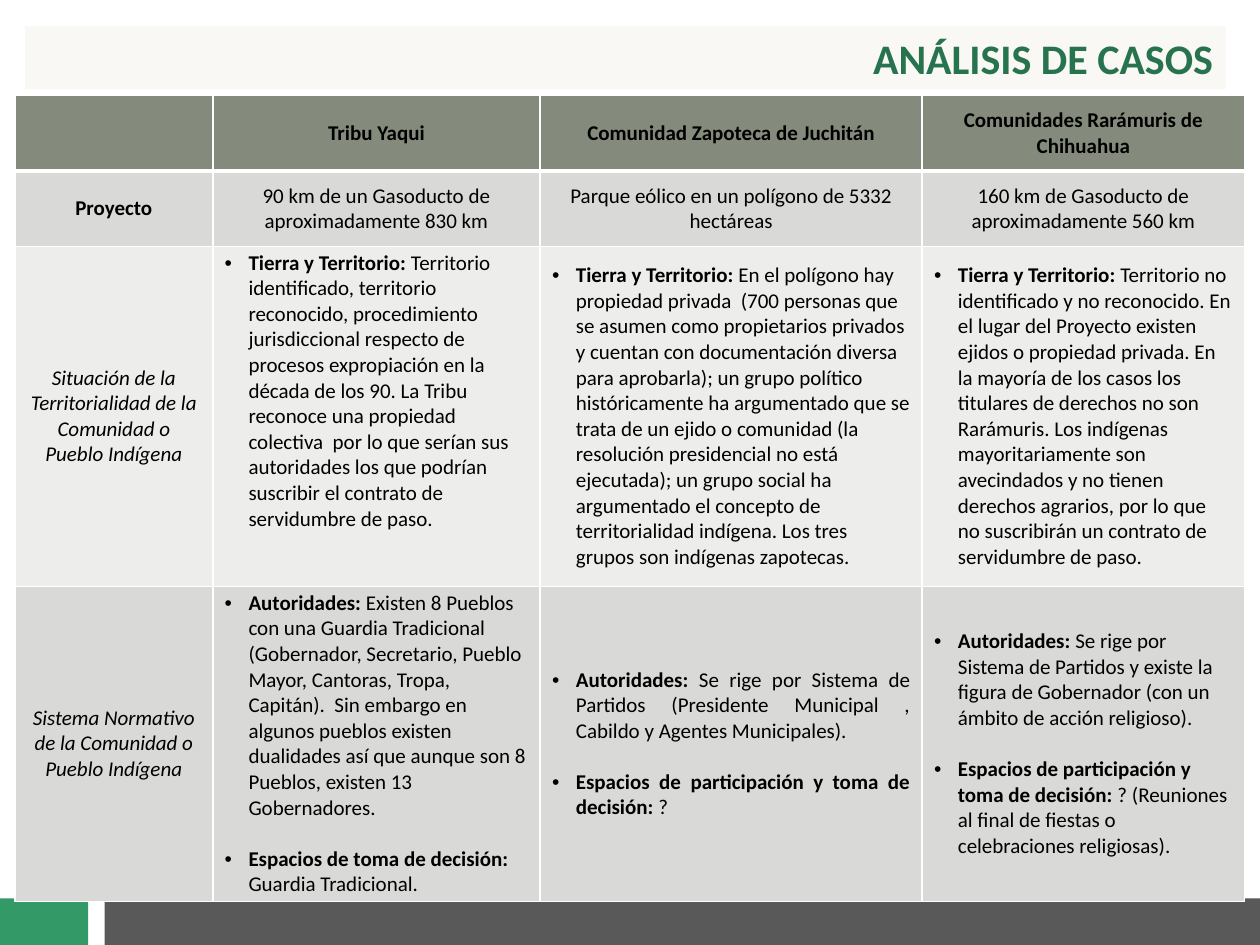
from dataclasses import dataclass

from lxml import etree
from pptx import Presentation
from pptx.dml.color import RGBColor
from pptx.enum.shapes import MSO_SHAPE
from pptx.enum.text import MSO_ANCHOR, PP_ALIGN
from pptx.oxml.ns import qn
from pptx.util import Cm, Pt

LEFT, CENTER = PP_ALIGN.LEFT, PP_ALIGN.CENTER
RIGHT, JUSTIFY = PP_ALIGN.RIGHT, PP_ALIGN.JUSTIFY
MIDDLE = MSO_ANCHOR.MIDDLE
RECTANGLE = MSO_SHAPE.RECTANGLE

FONT = "Calibri"
BLACK, WHITE, TITLE_GREEN = "000000", "FFFFFF", "26734D"
HEADER_FILL, DARK_FILL, LIGHT_FILL = "858B7C", "D9DAD7", "EDEEEC"
INDENT = Cm(0.48)
LINE_GAP = 14.6
THIN, THICK = 1, 3


@dataclass
class Bar:
    left: float
    top: float
    width: float
    height: float
    fill: str


@dataclass
class Point:
    label: str
    body: str


@dataclass
class Entry:
    points: list[Point]
    align: PP_ALIGN = LEFT
    bottom: float = 0.07


@dataclass
class Row:
    height: float
    fill: str
    cells: list[str | Entry]
    bold_columns: tuple[int, ...] = ()
    italic_columns: tuple[int, ...] = ()


FOOTER_BARS = [
    Bar(2.11, 18.11, 23.29, 0.94, "595959"),
    Bar(0, 18.11, 1.78, 0.94, "339966"),
]
TITLE_BAR = Bar(0.51, 0.53, 24.2, 1.27, "F9F8F5")
COLUMN_WIDTHS = [3.99, 6.6, 7.7, 6.5]

LAND = "Tierra y Territorio: "
AUTHORITIES = "Autoridades: "
SPACES = "Espacios de participación y toma de decisión: "

ROWS = [
    Row(1.52, HEADER_FILL, [
        "", "Tribu Yaqui", "Comunidad Zapoteca de Juchitán",
        "Comunidades Rarámuris de Chihuahua",
    ], bold_columns=(1, 2, 3)),
    Row(1.52, DARK_FILL, [
        "Proyecto",
        "90 km de un Gasoducto de aproximadamente 830 km",
        "Parque eólico en un polígono de 5332 hectáreas",
        "160 km de Gasoducto de aproximadamente 560 km",
    ], bold_columns=(0,)),
    Row(6.85, LIGHT_FILL, [
        "Situación de la Territorialidad de la Comunidad o Pueblo Indígena",
        Entry([Point(LAND, "Territorio identificado, territorio reconocido, procedimiento "
                     "jurisdiccional respecto de procesos expropiación en la década de los 90. "
                     "La Tribu reconoce una propiedad colectiva  por lo que serían sus "
                     "autoridades los que podrían suscribir el contrato de servidumbre de "
                     "paso.")], bottom=1.1),
        Entry([Point(LAND, "En el polígono hay propiedad privada  (700 personas que se asumen "
                     "como propietarios privados y cuentan con documentación diversa para "
                     "aprobarla); un grupo político  históricamente ha argumentado que se trata "
                     "de un ejido o comunidad (la resolución presidencial no está ejecutada); "
                     "un grupo social ha argumentado el concepto de territorialidad indígena. "
                     "Los tres grupos son indígenas zapotecas.")]),
        Entry([Point(LAND, "Territorio no identificado y no reconocido. En el lugar del "
                     "Proyecto existen ejidos o propiedad privada. En la mayoría de los casos "
                     "los titulares de derechos no son Rarámuris. Los indígenas "
                     "mayoritariamente son avecindados y no tienen derechos agrarios, por lo "
                     "que no suscribirán un contrato de servidumbre de paso.")]),
    ], italic_columns=(0,)),
    Row(6.35, DARK_FILL, [
        "Sistema Normativo de la Comunidad o Pueblo Indígena",
        Entry([Point(AUTHORITIES, "Existen 8 Pueblos con una Guardia Tradicional (Gobernador, "
                     "Secretario, Pueblo Mayor, Cantoras, Tropa, Capitán).  Sin embargo en "
                     "algunos pueblos existen dualidades así que aunque son 8 Pueblos, existen "
                     "13 Gobernadores."),
               Point("Espacios de toma de decisión: ", "Guardia Tradicional.")]),
        Entry([Point(AUTHORITIES, "Se rige por Sistema de Partidos (Presidente Municipal , "
                     "Cabildo y Agentes Municipales)."),
               Point(SPACES, "?")], align=JUSTIFY),
        Entry([Point(AUTHORITIES, "Se rige por Sistema de Partidos y existe la figura de "
                     "Gobernador (con un ámbito de acción religioso)."),
               Point(SPACES, "? (Reuniones al final de fiestas o celebraciones religiosas).")]),
    ], italic_columns=(0,)),
]


def color(value: str) -> RGBColor:
    return RGBColor.from_string(value)


def add_span(para, text: str, *, size=12, fill=BLACK, bold=False, italic=False) -> None:
    span = para.add_run()
    span.text = text
    font = span.font
    font.name, font.size, font.bold, font.italic = FONT, Pt(size), bold, italic
    font.color.rgb = color(fill)


def add_bar(page, bar: Bar):
    box = page.shapes.add_shape(
        RECTANGLE, Cm(bar.left), Cm(bar.top), Cm(bar.width), Cm(bar.height))
    box.shadow.inherit = False
    box.fill.solid()
    box.fill.fore_color.rgb = color(bar.fill)
    box.line.fill.background()
    return box


def set_borders(cell, widths: dict[str, float]) -> None:
    properties = cell._tc.get_or_add_tcPr()
    for position, (side, width) in enumerate(widths.items()):
        line = etree.Element(qn(f"a:ln{side}"), w=str(Pt(width)))
        solid = etree.SubElement(line, qn("a:solidFill"))
        etree.SubElement(solid, qn("a:srgbClr"), val=WHITE)
        properties.insert(position, line)


def add_bullet(para) -> None:
    properties = para._p.get_or_add_pPr()
    properties.set("marL", str(INDENT))
    properties.set("indent", str(-INDENT))
    etree.SubElement(properties, qn("a:buFont"), typeface="Arial")
    etree.SubElement(properties, qn("a:buChar"), char="•")


def write_entry(cell, entry: Entry) -> None:
    cell.margin_bottom = Cm(entry.bottom)
    frame = cell.text_frame
    for index, point in enumerate(entry.points):
        para = frame.add_paragraph() if index else frame.paragraphs[0]
        add_bullet(para)
        para.alignment = entry.align
        if index:
            para.space_before = Pt(LINE_GAP)
        add_span(para, point.label, bold=True)
        add_span(para, point.body)


def add_case_table(page) -> None:
    table = page.shapes.add_table(
        len(ROWS), len(COLUMN_WIDTHS), Cm(0.3), Cm(1.93),
        Cm(sum(COLUMN_WIDTHS)), Cm(sum(row.height for row in ROWS))).table
    table.horz_banding = False
    for column, width in zip(table.columns, COLUMN_WIDTHS):
        column.width = Cm(width)
    for r, row in enumerate(ROWS):
        table.rows[r].height = Cm(row.height)
        for c, content in enumerate(row.cells):
            cell = table.cell(r, c)
            cell.vertical_anchor = MIDDLE
            cell.margin_left = cell.margin_right = Cm(0.24)
            cell.margin_top = cell.margin_bottom = Cm(0.07)
            cell.fill.solid()
            cell.fill.fore_color.rgb = color(row.fill)
            set_borders(cell, {"L": THIN, "R": THIN, "T": THICK if r == 1 else THIN,
                               "B": THICK if r == 0 else THIN})
            if isinstance(content, Entry):
                write_entry(cell, content)
            elif content:
                para = cell.text_frame.paragraphs[0]
                para.alignment = CENTER
                add_span(para, content, bold=c in row.bold_columns,
                         italic=c in row.italic_columns)


def main() -> None:
    deck = Presentation()
    deck.slide_width, deck.slide_height = Cm(25.4), Cm(19.05)
    page = deck.slides.add_slide(deck.slide_layouts[6])

    # Footer
    for bar in FOOTER_BARS:
        add_bar(page, bar)

    # Title
    frame = add_bar(page, TITLE_BAR).text_frame
    frame.word_wrap = True
    frame.vertical_anchor = MIDDLE
    para = frame.paragraphs[0]
    para.alignment = RIGHT
    add_span(para, "ANÁLISIS DE CASOS", size=24, fill=TITLE_GREEN, bold=True)

    # Comparison of cases
    add_case_table(page)
    deck.save("out.pptx")


if __name__ == "__main__":
    main()
